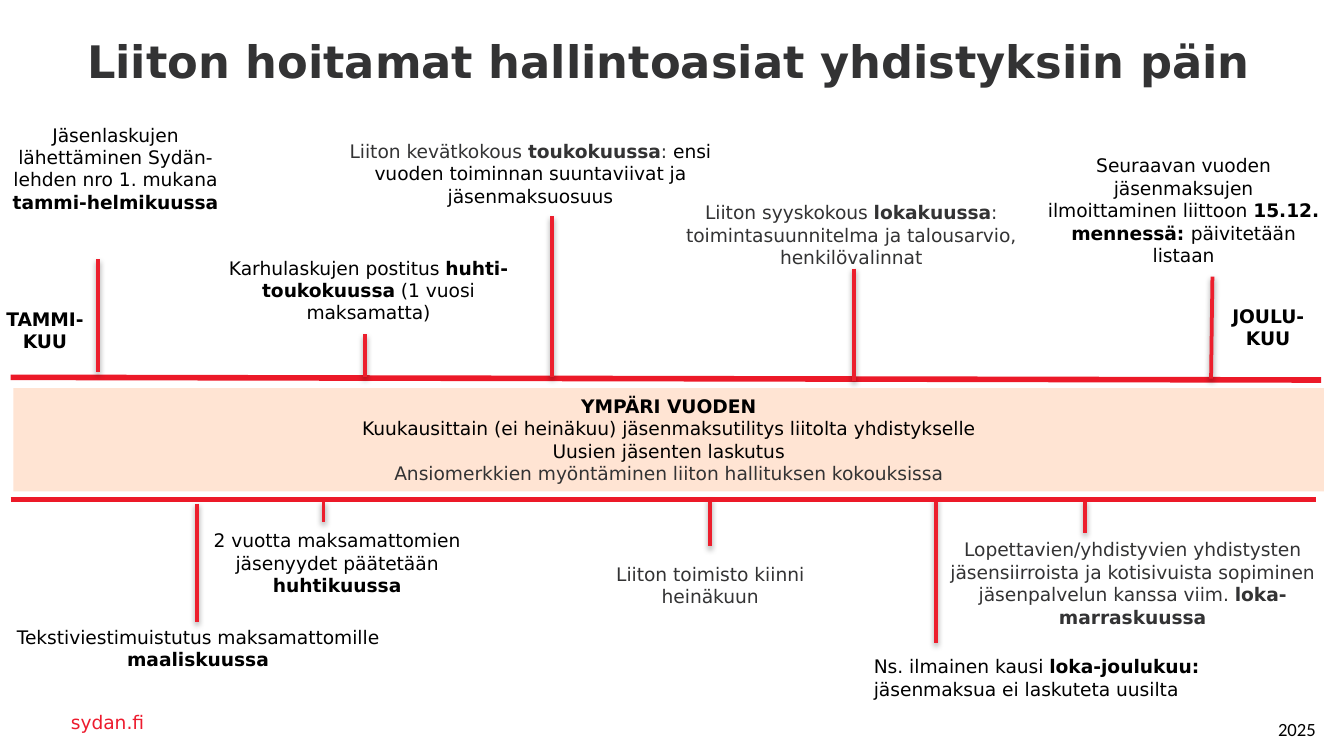
from lxml import etree
from pptx import Presentation
from pptx.dml.color import RGBColor
from pptx.enum.shapes import MSO_CONNECTOR, MSO_SHAPE
from pptx.enum.text import MSO_ANCHOR, PP_ALIGN
from pptx.oxml.ns import qn
from pptx.util import Inches, Pt

BLACK = RGBColor(0x00, 0x00, 0x00)
DARK = RGBColor(0x33, 0x33, 0x34)
RED = RGBColor(0xED, 0x1B, 0x2E)
AXIS_RED = RGBColor(0xEC, 0x19, 0x28)
MARK_RED = RGBColor(0xEC, 0x1F, 0x2D)
PEACH = RGBColor(0xFF, 0xE4, 0xD3)
LEFT, CENTER = PP_ALIGN.LEFT, PP_ALIGN.CENTER
TOP, MIDDLE = MSO_ANCHOR.TOP, MSO_ANCHOR.MIDDLE
STRAIGHT, RECT = MSO_CONNECTOR.STRAIGHT, MSO_SHAPE.RECTANGLE


class TimelineSlide:
    """Holds the text style and the slide, and draws each kind of element."""

    def __init__(self, prs, font="DejaVu Sans", size=10):
        self.slide = prs.slides.add_slide(prs.slide_layouts[6])
        self.font = font
        self.size = size

    def fill_text(self, sp, paragraphs, color, align, anchor, size=None, font=None):
        tf = sp.text_frame
        tf.word_wrap = True
        tf.vertical_anchor = anchor
        for i, runs in enumerate(paragraphs):
            p = tf.paragraphs[0] if i == 0 else tf.add_paragraph()
            p.alignment = align
            for text, bold, *own_color in runs:
                r = p.add_run()
                r.text = text
                r.font.name = font or self.font
                r.font.size = Pt(size or self.size)
                r.font.bold = bold
                r.font.color.rgb = own_color[0] if own_color else color

    def text(self, box, paragraphs, color=BLACK, align=CENTER, anchor=TOP, **style):
        sp = self.slide.shapes.add_textbox(*map(Inches, box))
        self.fill_text(sp, paragraphs, color, align, anchor, **style)

    def band(self, box, paragraphs, fill):
        sp = self.slide.shapes.add_shape(RECT, *map(Inches, box))
        sp.shadow.inherit = False
        sp.fill.solid()
        sp.fill.fore_color.rgb = fill
        sp.line.fill.background()
        self.fill_text(sp, paragraphs, BLACK, CENTER, MIDDLE)

    def line(self, x1, y1, x2, y2, color, width):
        ends = map(Inches, (x1, y1, x2, y2))
        cn = self.slide.shapes.add_connector(STRAIGHT, *ends)
        cn.line.color.rgb = color
        cn.line.width = Pt(width)
        return etree.SubElement(cn._element.spPr, qn("a:effectLst"))

    def marker(self, x1, y1, x2, y2):
        effects = self.line(x1, y1, x2, y2, MARK_RED, 2)
        shadow = etree.SubElement(
            effects, qn("a:outerShdw"), blurRad=str(Pt(3.1)), dist=str(Pt(1.6)),
            dir="5400000", rotWithShape="0")
        black = etree.SubElement(shadow, qn("a:srgbClr"), val="000000")
        etree.SubElement(black, qn("a:alpha"), val="38000")


MARKERS = [
    (0.73, 1.93, 0.73, 2.77),
    (2.72, 2.49, 2.72, 2.81),
    (4.11, 1.61, 4.11, 2.81),
    (6.36, 2, 6.36, 2.84),
    (9.03, 2.06, 9.02, 2.82),
    (1.47, 3.75, 1.47, 4.63),
    (2.41, 3.73, 2.41, 3.89),
    (5.29, 3.71, 5.29, 4.07),
    (6.97, 3.71, 6.97, 4.79),
    (8.08, 3.72, 8.08, 3.97),
]

YEAR_ROUND = [
    [("YMPÄRI VUODEN", True)],
    [("Kuukausittain (ei heinäkuu) jäsenmaksutilitys liitolta yhdistykselle", False)],
    [("Uusien jäsenten laskutus", False)],
    [("Ansiomerkkien myöntäminen liiton hallituksen kokouksissa", False, DARK)],
]

EVENTS = [
    ((-0.01, 0.87, 1.74, 0.94), BLACK, [
        [("Jäsenlaskujen", False)],
        [("lähettäminen Sydän-lehden nro 1. mukana ", False),
         ("tammi-helmikuussa", True)]]),
    ((-0.08, 2.24, 0.83, 0.44), BLACK, [[("TAMMI-", True)], [("KUU", True)]]),
    ((9.03, 2.22, 0.83, 0.44), BLACK, [[("JOULU-", True)], [("KUU", True)]]),
    ((1.38, 1.86, 2.73, 0.61), BLACK, [
        [("Karhulaskujen postitus ", False), ("huhti-toukokuussa", True),
         (" (1 vuosi maksamatta)", False)]]),
    ((2.34, 0.99, 3.22, 0.61), DARK, [
        [("Liiton kevätkokous ", False), ("toukokuussa", True), (": ", False),
         ("ensi vuoden toiminnan suuntaviivat ja jäsenmaksuosuus", False, BLACK)]]),
    ((4.84, 1.45, 3, 0.61), DARK, [
        [("Liiton syyskokous ", False), ("lokakuussa", True),
         (": toimintasuunnitelma ja talousarvio, henkilövalinnat", False)]]),
    ((7.7, 1.1, 2.23, 0.94), BLACK, [
        [("Seuraavan vuoden jäsenmaksujen ilmoittaminen liittoon ", False),
         ("15.12. mennessä: ", True), ("päivitetään listaan", False)]]),
    ((-0.09, 4.61, 3.13, 0.44), BLACK, [
        [("Tekstiviestimuistutus maksamattomille ", False), ("maaliskuussa", True)]]),
    ((1.35, 3.89, 2.32, 0.61), BLACK, [
        [("2 vuotta maksamattomien jäsenyydet päätetään ", False),
         ("huhtikuussa", True)]]),
    ((4.41, 4.14, 1.76, 0.44), DARK, [[("Liiton toimisto kiinni heinäkuun", False)]]),
    ((6.94, 3.96, 2.99, 0.77), DARK, [
        [("Lopettavien/yhdistyvien yhdistysten jäsensiirroista ja kotisivuista "
          "sopiminen jäsenpalvelun kanssa viim. ", False),
         ("loka-marraskuussa", True)]]),
]


def main():
    prs = Presentation()
    prs.slide_width, prs.slide_height = Inches(10.01), Inches(5.63)
    s = TimelineSlide(prs)

    s.text((0.45, 0.2, 9.06, 0.54),
           [[("Liiton hoitamat hallintoasiat yhdistyksiin päin", True)]],
           color=DARK, size=24)
    s.line(0.08, 2.81, 9.84, 2.83, AXIS_RED, 3)
    for marker in MARKERS:
        s.marker(*marker)
    s.line(0.08, 3.72, 9.8, 3.72, AXIS_RED, 3)
    s.band((0.1, 2.89, 9.76, 0.77), YEAR_ROUND, PEACH)

    for box, color, paragraphs in EVENTS:
        s.text(box, paragraphs, color)
    s.text((6.41, 4.83, 2.85, 0.44),
           [[("Ns. ilmainen kausi ", False), ("loka-joulukuu:", True),
             (" jäsenmaksua ei laskuteta uusilta", False)]], align=LEFT)

    s.text((0.43, 5.23, 7.36, 0.3), [[("sydan.fi", False)]],
           color=RED, align=LEFT, anchor=MIDDLE)
    s.text((9.42, 5.3, 0.89, 0.27), [[("2025", False)]], align=LEFT, font="Calibri")
    prs.save("out.pptx")


if __name__ == "__main__":
    main()
